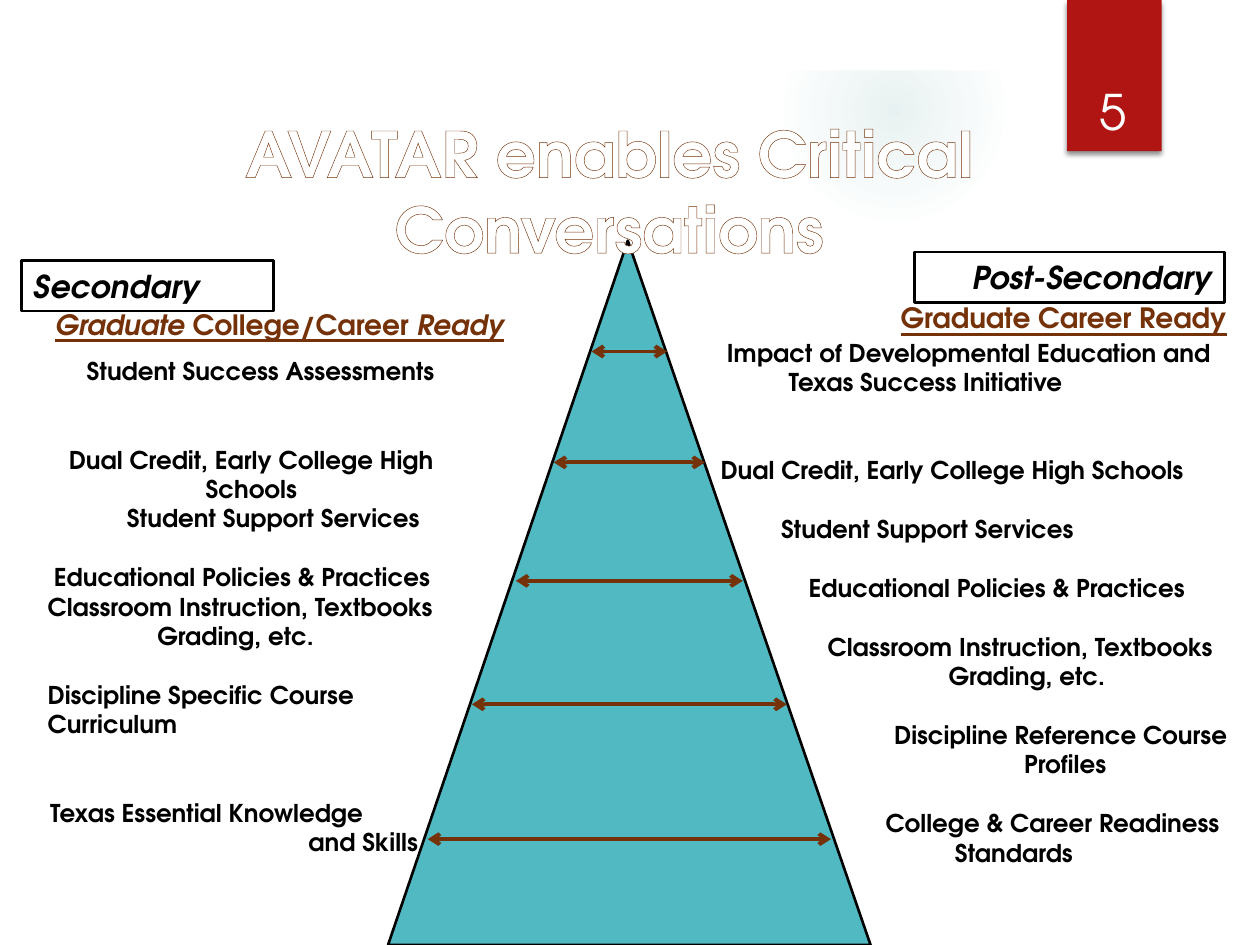
from lxml import etree
from pptx import Presentation
from pptx.dml.color import RGBColor
from pptx.enum.shapes import MSO_CONNECTOR, MSO_SHAPE
from pptx.enum.text import MSO_ANCHOR, PP_ALIGN
from pptx.oxml import parse_xml
from pptx.oxml.ns import nsdecls, qn
from pptx.util import Inches, Pt

LEFT, CENTER, RIGHT = PP_ALIGN.LEFT, PP_ALIGN.CENTER, PP_ALIGN.RIGHT
TOP, MIDDLE, BOTTOM = MSO_ANCHOR.TOP, MSO_ANCHOR.MIDDLE, MSO_ANCHOR.BOTTOM
RECTANGLE, OVAL, TRIANGLE = MSO_SHAPE.RECTANGLE, MSO_SHAPE.OVAL, MSO_SHAPE.ISOSCELES_TRIANGLE
STRAIGHT = MSO_CONNECTOR.STRAIGHT

BLACK = RGBColor(0x00, 0x00, 0x00)
WHITE = RGBColor(0xFF, 0xFF, 0xFF)
RED = RGBColor(0xB0, 0x15, 0x13)
TEAL = RGBColor(0x50, 0xB9, 0xC1)
BROWN = RGBColor(0x75, 0x32, 0x09)
GLOW = RGBColor(0x5F, 0x9C, 0x9D)

FONT = "TeX Gyre Adventor"
LINE_PITCH = 16.8

SECONDARY_TOPICS = [
    ("Student Success Assessments", LEFT, 0.31, 0),
    ("Dual Credit, Early College High Schools", CENTER, 0, 2),
    ("Student Support Services", LEFT, 0.63, 0),
    ("Educational Policies & Practices", LEFT, 0.05, 1),
    ("Classroom Instruction, Textbooks", LEFT, 0, 0),
    ("Grading, etc.", LEFT, 0.87, 0),
    ("Discipline Specific Course", LEFT, 0, 1),
    ("Curriculum", LEFT, 0, 0),
    ("Texas Essential Knowledge", LEFT, 0.02, 2),
    ("and Skills", LEFT, 2.07, 0),
]
POST_SECONDARY_TOPICS = [
    ("Impact of Developmental Education and", LEFT, 0.05, 0),
    ("Texas Success Initiative", LEFT, 0.54, 0),
    ("Dual Credit, Early College High Schools", LEFT, 0, 2),
    ("Student Support Services", LEFT, 0.48, 1),
    ("Educational Policies & Practices", LEFT, 0.7, 1),
    ("Classroom Instruction, Textbooks", LEFT, 0.85, 1),
    ("Grading, etc.", LEFT, 1.81, 0),
    ("Discipline Reference Course", RIGHT, 0, 1),
    ("Profiles", LEFT, 2.41, 0),
    ("College & Career Readiness", LEFT, 1.31, 1),
    ("Standards", LEFT, 1.86, 0),
]
ARROWS = [(2.79, 0.3), (3.67, 0.6), (4.61, 0.9), (5.59, 1.25), (6.66, 1.6)]


def add_run(paragraph, text, size=14, color=BLACK, bold=True, italic=False, underline=False):
    """Append one formatted run and return it."""
    run = paragraph.add_run()
    run.text = text
    font = run.font
    font.name, font.size, font.color.rgb = FONT, Pt(size), color
    font.bold, font.italic, font.underline = bold, italic, underline
    return run


def add_text_box(slide, left, top, width, height, anchor=TOP):
    """Add a wrapping text box and return its text frame."""
    box = slide.shapes.add_textbox(Inches(left), Inches(top), Inches(width), Inches(height))
    box.text_frame.word_wrap = True
    box.text_frame.vertical_anchor = anchor
    return box.text_frame


def add_box(slide, kind, left, top, width, height, fill=None, line=None):
    """Add a flat preset shape with an optional fill and outline."""
    shape = slide.shapes.add_shape(kind, Inches(left), Inches(top), Inches(width), Inches(height))
    shape.shadow.inherit = False
    if fill is None:
        shape.fill.background()
    else:
        shape.fill.solid()
        shape.fill.fore_color.rgb = fill
    if line is None:
        shape.line.fill.background()
    else:
        shape.line.color.rgb = line
        shape.line.width = Pt(1.5)
    return shape


def add_glow(slide, left, top, size):
    """Add a soft round glow that fades outwards, cut off by the top margin."""
    shape = add_box(slide, OVAL, left, top, size, size, fill=GLOW)
    stops = "".join(
        f'<a:gs pos="{position}000"><a:srgbClr val="{GLOW}"><a:alpha val="{alpha}000"/></a:srgbClr></a:gs>'
        for position, alpha in [(0, 14), (36, 7), (73, 0)])
    gradient = parse_xml(
        f'<a:gradFill {nsdecls("a")}><a:gsLst>{stops}</a:gsLst><a:path path="circle">'
        '<a:fillToRect l="50000" t="50000" r="50000" b="50000"/></a:path></a:gradFill>')
    properties = shape._element.spPr
    properties.replace(properties.find(qn("a:solidFill")), gradient)
    add_box(slide, RECTANGLE, 0, 0, 10, 0.56, fill=WHITE)


def add_page_tab(slide, left, top, width, height):
    """Add the red tab with its shadow and the slide number."""
    tab = add_box(slide, RECTANGLE, left, top, width, height, fill=RED)
    tab._element.spPr.find(qn("a:effectLst")).append(parse_xml(
        f'<a:outerShdw {nsdecls("a")} blurRad="38100" dist="25400" dir="5400000" rotWithShape="0">'
        '<a:srgbClr val="000000"><a:alpha val="45000"/></a:srgbClr></a:outerShdw>'))
    frame = add_text_box(slide, left - 0.07, top + 0.32, width + 0.12, 0.84, anchor=BOTTOM)
    paragraph = frame.paragraphs[0]
    paragraph.alignment = CENTER
    add_run(paragraph, "5", size=28, color=WHITE, bold=False)


def add_arrow(slide, center, top, half_width):
    """Add a level two-headed arrow about a centre."""
    arrow = slide.shapes.add_connector(
        STRAIGHT, Inches(center - half_width), Inches(top), Inches(center + half_width), Inches(top))
    arrow.line.color.rgb = BROWN
    arrow.line.width = Pt(2.25)
    line = arrow.line._get_or_add_ln()
    for end in ("a:headEnd", "a:tailEnd"):
        etree.SubElement(line, qn(end), type="arrow")
    etree.SubElement(arrow._element.spPr, qn("a:effectLst"))


def add_pyramid(slide, left, top, width, height):
    """Add the triangle and the arrows that span it."""
    triangle = add_box(slide, TRIANGLE, left, top, width, height, fill=TEAL, line=BLACK)
    triangle.adjustments[0] = 0.497
    for arrow_top, half_width in ARROWS:
        add_arrow(slide, left + width / 2, arrow_top, half_width)


def add_title(slide, left, top, width, height):
    """Add the white title with brown letter outlines."""
    paragraph = add_text_box(slide, left, top, width, height).paragraphs[0]
    paragraph.alignment = CENTER
    run = add_run(paragraph, "AVATAR enables Critical Conversations", size=36, color=WHITE)
    run.font._element.insert(0, parse_xml(
        f'<a:ln {nsdecls("a")} w="18000"><a:solidFill><a:srgbClr val="{BROWN}"/></a:solidFill></a:ln>'))


def add_topics(slide, left, top, width, height, topics):
    """Add a column of topics, each with alignment, indent and blank lines before."""
    frame = add_text_box(slide, left, top, width, height)
    for index, (text, alignment, indent, gap) in enumerate(topics):
        paragraph = frame.add_paragraph() if index else frame.paragraphs[0]
        paragraph.alignment = alignment
        paragraph._p.get_or_add_pPr().set("marL", str(Inches(indent)))
        if gap:
            paragraph.space_before = Pt(gap * LINE_PITCH)
        add_run(paragraph, text)


def add_level_label(slide, left, top, width, height, text, alignment):
    """Add an outlined label naming the school level."""
    frame = add_box(slide, RECTANGLE, left, top, width, height, line=BLACK).text_frame
    frame.word_wrap = True
    frame.vertical_anchor = MIDDLE
    frame.paragraphs[0].alignment = alignment
    add_run(frame.paragraphs[0], text, size=18, italic=True)


def add_goal(slide, left, top, width, height, parts):
    """Add an underlined goal line from pairs of text and italic."""
    paragraph = add_text_box(slide, left, top, width, height).paragraphs[0]
    for text, italic in parts:
        add_run(paragraph, text, size=16, color=BROWN, italic=italic, underline=True)


def main():
    """Build the slide and save it."""
    presentation = Presentation()
    presentation.slide_width, presentation.slide_height = Inches(10), Inches(7.5)
    slide = presentation.slides.add_slide(presentation.slide_layouts[6])
    add_glow(slide, 6.22, 0, 1.75)
    add_page_tab(slide, 8.47, 0, 0.75, 1.2)
    add_topics(slide, 5.62, 2.63, 4.22, 4.58, POST_SECONDARY_TOPICS)
    add_pyramid(slide, 3.08, 1.91, 3.83, 5.59)
    add_title(slide, 0.84, 0.86, 7.99, 1.31)
    add_topics(slide, 0.28, 2.78, 3.43, 4.34, SECONDARY_TOPICS)
    add_level_label(slide, 0.17, 2.07, 2, 0.4, "Secondary", LEFT)
    add_level_label(slide, 7.26, 2, 2.46, 0.4, "Post-Secondary", RIGHT)
    add_goal(slide, 0.34, 2.39, 4.36, 0.37,
             [("Graduate ", True), ("College/Career", False), (" Ready", True)])
    add_goal(slide, 7.05, 2.34, 3.03, 0.37, [("Graduate Career Ready", False)])
    presentation.save("out.pptx")


if __name__ == "__main__":
    main()
